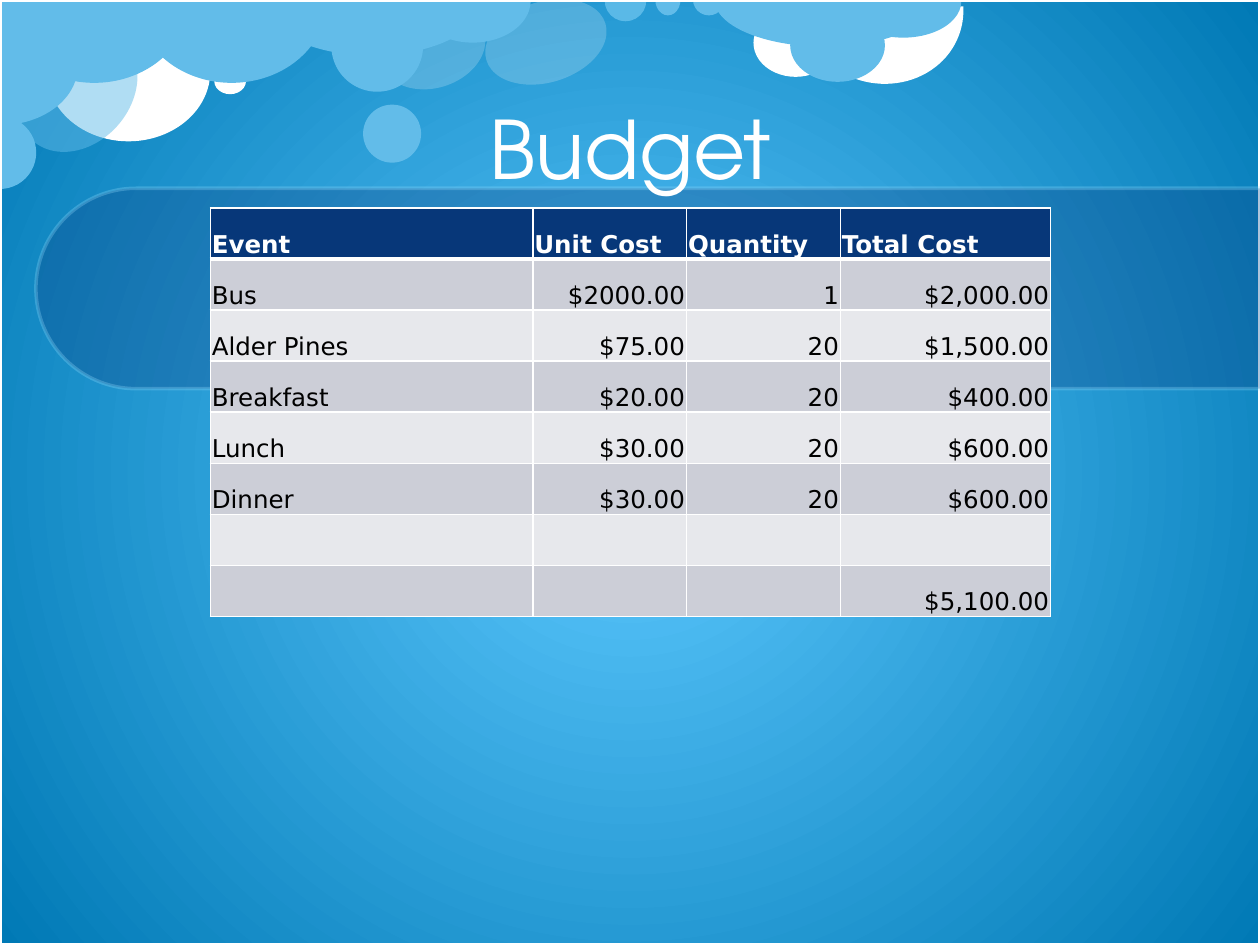
from pptx import Presentation
from pptx.dml.color import RGBColor
from pptx.enum.shapes import MSO_SHAPE
from pptx.enum.text import MSO_ANCHOR, PP_ALIGN
from pptx.oxml import parse_xml
from pptx.oxml.ns import nsdecls, qn
from pptx.util import Cm, Pt

ELLIPSE, PIE, ARC = MSO_SHAPE.OVAL, MSO_SHAPE.PIE, MSO_SHAPE.ARC
RECTANGLE, ROUND_ENDED = MSO_SHAPE.RECTANGLE, MSO_SHAPE.ROUND_2_SAME_RECTANGLE
MIDDLE, BOTTOM = MSO_ANCHOR.MIDDLE, MSO_ANCHOR.BOTTOM
LEFT, CENTER, RIGHT = PP_ALIGN.LEFT, PP_ALIGN.CENTER, PP_ALIGN.RIGHT

WHITE = RGBColor(0xFF, 0xFF, 0xFF)
BLACK = RGBColor(0x00, 0x00, 0x00)
GLOW = RGBColor(0x5D, 0xC9, 0xFF)
DEEP_SKY = RGBColor(0x00, 0x79, 0xB5)
CLOUD = RGBColor(0x62, 0xBC, 0xE9)
PALE_SKY = RGBColor(0x8F, 0xD9, 0xFB)
NAVY = RGBColor(0x07, 0x37, 0x79)
GREY = RGBColor(0xCC, 0xCE, 0xD7)
LIGHT_GREY = RGBColor(0xE7, 0xE8, 0xEC)

ADJUSTMENTS = {PIE: (0, 108), ARC: (151.8, 44.48), ROUND_ENDED: (0.5, 0)}


def add_figure(kind, box, rotation=0, fill=None, opacity=100, line=None):
    figure = slide.shapes.add_shape(kind, *map(Cm, box))
    figure.shadow.inherit = False
    figure.rotation = rotation
    for index, value in enumerate(ADJUSTMENTS.get(kind, ())):
        figure.adjustments[index] = value
    if fill is None:
        figure.fill.background()
    else:
        figure.fill.solid()
        figure.fill.fore_color.rgb = fill
    if line is None:
        figure.line.fill.background()
    else:
        figure.line.color.rgb = line
        figure.line.width = Pt(2)
    if opacity < 100:
        for color in figure.element.iter(qn("a:srgbClr")):
            color.append(parse_xml(f'<a:alpha {nsdecls("a")} val="{opacity * 1000}"/>'))


def apply_format(target, values):
    for name, value in values.items():
        setattr(target, name, value)


deck = Presentation()
deck.slide_width, deck.slide_height = Cm(25.4), Cm(19.05)
slide = deck.slides.add_slide(deck.slide_layouts[6])

sky = slide.background.fill
sky.gradient()
for stop, color in zip(sky.gradient_stops, (GLOW, DEEP_SKY)):
    stop.color.rgb = color
gradient = slide.element.find(".//" + qn("a:gradFill"))
gradient.remove(gradient.find(qn("a:lin")))
gradient.append(parse_xml(
    f'<a:path {nsdecls("a")} path="circle">'
    '<a:fillToRect l="50000" t="50000" r="50000" b="50000"/></a:path>'
))

clouds = [
    (ELLIPSE, (7.9, -0.13, 1.63, 2.18), 72.8, WHITE, 20),
    (ELLIPSE, (0.94, 0.03, 3.3, 2.82), 0, WHITE, 100),
    (ARC, (16.23, -1.52, 3.07, 3.33), 106.5, WHITE, 100),
    (ELLIPSE, (15.19, 0.18, 1.7, 1.37), 0, WHITE, 100),
    (PIE, (-0.03, -1.68, 3.86, 3.35), 0, CLOUD, 100),
    (PIE, (5.28, -1.12, 4.45, 2.24), 0, CLOUD, 100),
    (ELLIPSE, (7.32, 2.11, 1.17, 1.17), 0, CLOUD, 100),
    (ELLIPSE, (0.48, 0.46, 2.16, 2.72), 41.8, CLOUD, 50),
    (PIE, (-0.74, 2.34, 1.47, 1.47), 270, CLOUD, 100),
    (ELLIPSE, (4.32, 1.37, 0.64, 0.53), 0, WHITE, 100),
    (PIE, (2.74, -1.68, 3.86, 3.35), 0, CLOUD, 100),
    (PIE, (14.4, -0.97, 4.45, 1.91), 0, CLOUD, 100),
    (ELLIPSE, (15.93, 0.18, 1.91, 1.47), 0, CLOUD, 100),
    (PIE, (17.04, -0.71, 2.34, 1.47), 0, CLOUD, 100),
    (ELLIPSE, (10.19, -0.41, 1.63, 2.51), 72.8, WHITE, 20),
    (PIE, (12.19, -0.41, 0.84, 0.84), 0, PALE_SKY, 50),
    (PIE, (13.21, -0.33, 0.51, 0.64), 0, CLOUD, 100),
    (PIE, (13.97, -0.33, 0.64, 0.64), 0, CLOUD, 100),
    (ELLIPSE, (6.68, 0, 1.85, 1.85), 0, CLOUD, 100),
    (PIE, (8.36, -0.84, 2.34, 1.7), 0, CLOUD, 100),
    (PIE, (-1.19, -0.23, 2.36, 3.15), 270, CLOUD, 100),
]
for cloud in clouds:
    add_figure(*cloud)
add_figure(RECTANGLE, (0, 0, 25.4, 19.05), line=WHITE)
add_figure(ROUND_ENDED, (11.05, -6.53, 4.04, 24.69), 270, NAVY, 30, PALE_SKY)

title = slide.shapes.add_textbox(Cm(1.98), Cm(0.51), Cm(21.44), Cm(4.88)).text_frame
apply_format(title, {"word_wrap": True, "vertical_anchor": MIDDLE, "text": "Budget"})
heading = title.paragraphs[0]
apply_format(heading, {"alignment": CENTER, "line_spacing": Pt(56)})
apply_format(heading.font, {"name": "TeX Gyre Adventor", "size": Pt(46)})
heading.font.color.rgb = WHITE

costs = [
    ("Event", "Unit Cost", "Quantity", "Total Cost"),
    ("Bus", "$2000.00", "1", "$2,000.00"),
    ("Alder Pines", "$75.00", "20", "$1,500.00"),
    ("Breakfast", "$20.00", "20", "$400.00"),
    ("Lunch", "$30.00", "20", "$600.00"),
    ("Dinner", "$30.00", "20", "$600.00"),
    ("", "", "", ""),
    ("", "", "", "$5,100.00"),
]
column_widths = (6.5, 3.1, 3.1, 4.24)
row_height = 1.03
cell_format = {
    "vertical_anchor": BOTTOM,
    "margin_left": Cm(0.03),
    "margin_right": Cm(0.03),
    "margin_top": Cm(0.03),
    "margin_bottom": 0,
}

budget = slide.shapes.add_table(
    len(costs), len(column_widths), Cm(4.24), Cm(4.19),
    Cm(sum(column_widths)), Cm(row_height * len(costs)),
).table
for column, width in zip(budget.columns, column_widths):
    column.width = Cm(width)
for row_index, entries in enumerate(costs):
    budget.rows[row_index].height = Cm(row_height)
    is_header = row_index == 0
    row_fill = NAVY if is_header else (LIGHT_GREY, GREY)[row_index % 2]
    borders = {"L": 1, "R": 1, "T": 3 if row_index == 1 else 1, "B": 3 if is_header else 1}
    for column_index, entry in enumerate(entries):
        cell = budget.cell(row_index, column_index)
        apply_format(cell, {"text": entry, **cell_format})
        paragraph = cell.text_frame.paragraphs[0]
        paragraph.alignment = LEFT if is_header or column_index == 0 else RIGHT
        apply_format(paragraph.font, {"name": "DejaVu Sans", "size": Pt(14), "bold": is_header})
        paragraph.font.color.rgb = WHITE if is_header else BLACK
        for side, width in borders.items():
            cell._tc.get_or_add_tcPr().append(parse_xml(
                f'<a:ln{side} {nsdecls("a")} w="{Pt(width)}"><a:solidFill>'
                f'<a:srgbClr val="{WHITE}"/></a:solidFill></a:ln{side}>'
            ))
        cell.fill.solid()
        cell.fill.fore_color.rgb = row_fill

deck.save("out.pptx")
